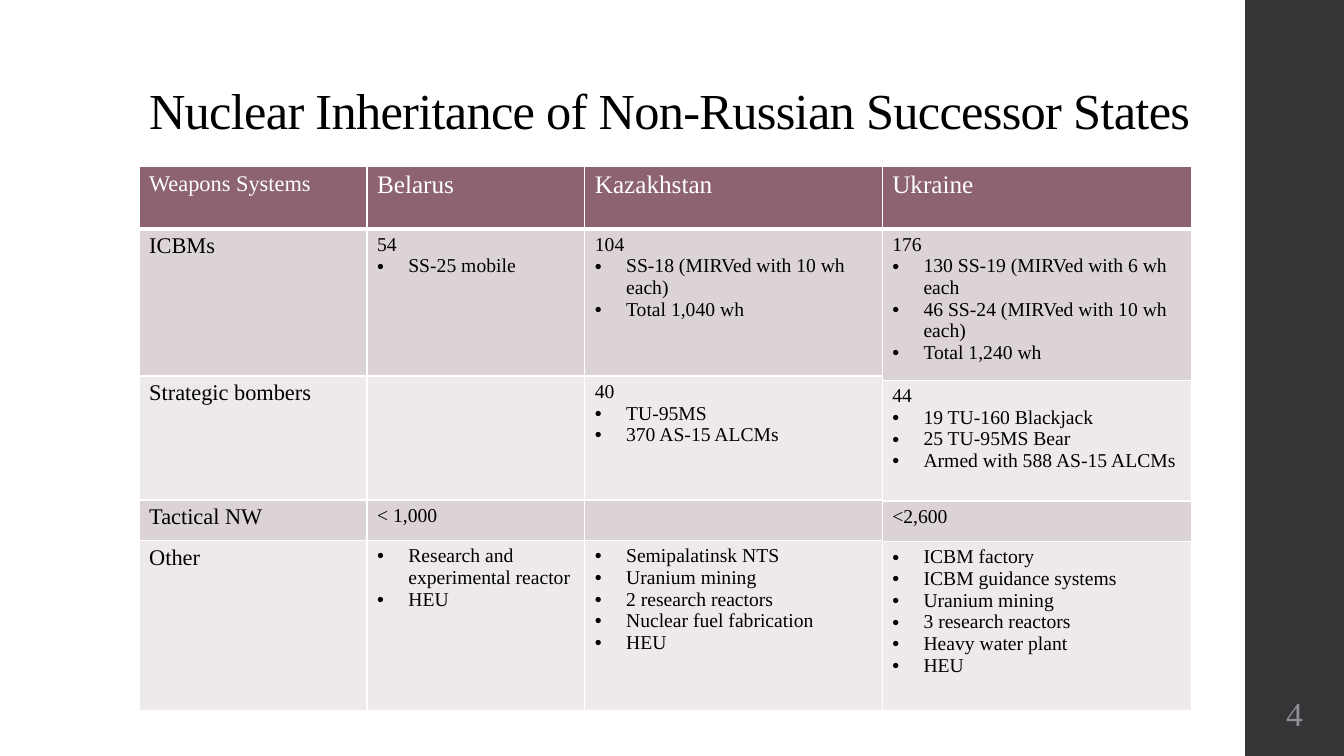
from lxml import etree
from pptx import Presentation
from pptx import util as u
from pptx.dml.color import RGBColor
from pptx.enum import shapes, text
from pptx.oxml.ns import qn

PX = 9144
COLORS = {
    "ink": "000000", "white": "FFFFFF", "sidebar": "353537", "number": "8E8E94",
    "header": "8D6374", "dark": "DBD3D6", "light": "EEEAEB",
}
ROW_FILLS = ["header", "dark", "light", "dark", "light"]
TOP = 165
ROW_HEIGHTS = [62, 146, 123, 40, 169]
UKRAINE_HEIGHTS = [62, 150, 120, 40, 168]
BULLET = "• "

COLUMNS = [
    (138, 237, ROW_HEIGHTS, 16, 16, [
        ["Weapons Systems"], ["ICBMs"], ["Strategic bombers"], ["Tactical NW"], ["Other"],
    ]),
    (364, 220, ROW_HEIGHTS, 18, 14, [
        ["Belarus"],
        ["54", "• SS-25 mobile"],
        [""],
        ["< 1,000"],
        ["• Research and experimental reactor", "• HEU"],
    ]),
    (580, 295, ROW_HEIGHTS, 18, 14, [
        ["Kazakhstan"],
        ["104", "• SS-18 (MIRVed with 10 wh each)", "• Total 1,040 wh"],
        ["40", "• TU-95MS", "• 370 AS-15 ALCMs"],
        [""],
        ["• Semipalatinsk NTS", "• Uranium mining", "• 2 research reactors",
         "• Nuclear fuel fabrication", "• HEU"],
    ]),
    (875, 307, UKRAINE_HEIGHTS, 18, 14, [
        ["Ukraine"],
        ["176", "• 130 SS-19 (MIRVed with 6 wh each",
         "• 46 SS-24 (MIRVed with 10 wh each)", "• Total 1,240 wh"],
        ["44", "• 19 TU-160 Blackjack", "• 25 TU-95MS Bear",
         "• Armed with 588 AS-15 ALCMs"],
        ["<2,600"],
        ["• ICBM factory", "• ICBM guidance systems", "• Uranium mining",
         "• 3 research reactors", "• Heavy water plant", "• HEU"],
    ]),
]


def rgb(name):
    return RGBColor.from_string(COLORS[name])


class SlideWriter:
    font = "Times New Roman"

    def __init__(self, slide):
        self.slide = slide

    def box(self, *lengths):
        return [length * PX for length in lengths]

    def style(self, paragraph, size, color):
        paragraph.font.name = self.font
        paragraph.font.size = u.Pt(size)
        paragraph.font.color.rgb = rgb(color)

    def rect(self, x, y, w, h, color):
        block = self.slide.shapes.add_shape(shapes.MSO_SHAPE.RECTANGLE, *self.box(x, y, w, h))
        block.shadow.inherit = False
        block.fill.solid()
        block.fill.fore_color.rgb = rgb(color)
        block.line.fill.background()

    def label(self, x, y, w, h, words, size, color, align=text.PP_ALIGN.LEFT,
              leading=1.0, tracking=0):
        frame = self.slide.shapes.add_textbox(*self.box(x, y, w, h)).text_frame
        frame.word_wrap = True
        frame.vertical_anchor = text.MSO_ANCHOR.MIDDLE
        paragraph = frame.paragraphs[0]
        paragraph.alignment = align
        paragraph.line_spacing = leading
        run = paragraph.add_run()
        run.text = words
        if tracking:
            run._r.get_or_add_rPr().set("spc", str(tracking))
        self.style(paragraph, size, color)

    def bullet(self, paragraph):
        props = paragraph._p.get_or_add_pPr()
        props.set("marL", str(31 * PX))
        props.set("indent", str(-31 * PX))
        etree.SubElement(props, qn("a:buFont")).set("typeface", "Arial")
        etree.SubElement(props, qn("a:buChar")).set("char", BULLET.strip())

    def borders(self, cell, bottom):
        props = cell._tc.get_or_add_tcPr()
        for place, (side, width) in enumerate(zip("LRTB", (1, 1, 1, bottom))):
            line = etree.Element(qn(f"a:ln{side}"), w=str(u.Pt(width)))
            fill = etree.SubElement(line, qn("a:solidFill"))
            etree.SubElement(fill, qn("a:srgbClr")).set("val", COLORS["white"])
            props.insert(place, line)

    def cell(self, cell, lines, size, color, fill, bottom):
        cell.fill.solid()
        cell.fill.fore_color.rgb = rgb(fill)
        self.borders(cell, bottom)
        frame = cell.text_frame
        for index, line in enumerate(lines):
            paragraph = frame.add_paragraph() if index else frame.paragraphs[0]
            if line.startswith(BULLET):
                self.bullet(paragraph)
            if line:
                paragraph.add_run().text = line.removeprefix(BULLET)
            self.style(paragraph, size, color)

    def column(self, x, width, heights, header_size, body_size, entries):
        table = self.slide.shapes.add_table(
            len(entries), 1, *self.box(x, TOP, width, sum(heights))).table
        table.first_row = table.horz_banding = False
        for row, (height, lines, fill) in enumerate(zip(heights, entries, ROW_FILLS)):
            table.rows[row].height = height * PX
            size, color, bottom = (body_size, "ink", 1) if row else (header_size, "white", 3)
            self.cell(table.cell(row, 0), lines, size, color, fill, bottom)


def main():
    deck = Presentation()
    deck.slide_width, deck.slide_height = 1333 * PX, 750 * PX
    writer = SlideWriter(deck.slides.add_slide(deck.slide_layouts[6]))
    writer.rect(1235, 0, 98, 750, "sidebar")
    writer.label(138, 40, 1060, 145, "Nuclear Inheritance of Non-Russian Successor States",
                 36, "ink", leading=0.9, tracking=-50)
    writer.label(1235, 675, 98, 65, "4", 24, "number", align=text.PP_ALIGN.CENTER)
    for column in COLUMNS:
        writer.column(*column)
    deck.save("out.pptx")


if __name__ == "__main__":
    main()
